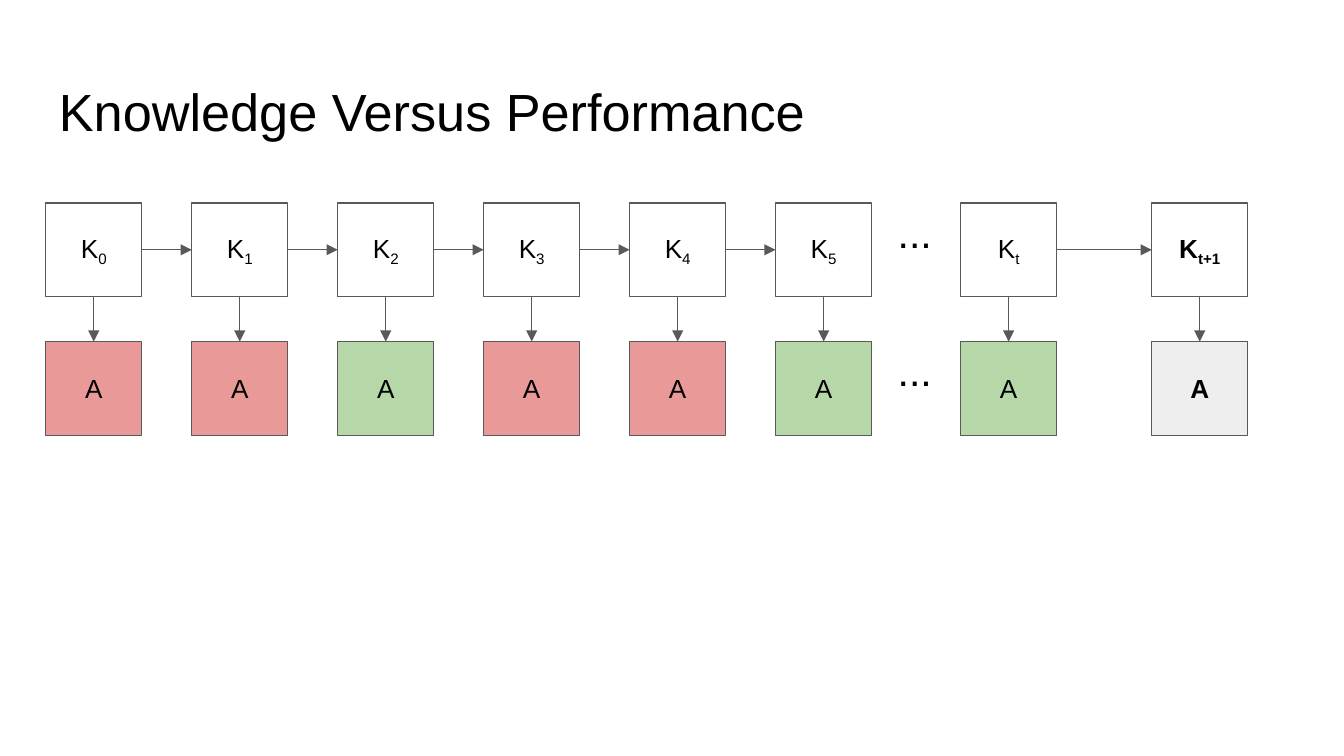
from dataclasses import dataclass

from lxml import etree
from pptx import Presentation
from pptx.dml.color import RGBColor
from pptx.enum.shapes import MSO_CONNECTOR, MSO_SHAPE
from pptx.enum.text import MSO_ANCHOR, PP_ALIGN
from pptx.oxml.ns import qn
from pptx.util import Pt

RECT = MSO_SHAPE.RECTANGLE
STRAIGHT = MSO_CONNECTOR.STRAIGHT
TOP, MIDDLE = MSO_ANCHOR.TOP, MSO_ANCHOR.MIDDLE
LEFT, CENTER = PP_ALIGN.LEFT, PP_ALIGN.CENTER
SITE_TOP, SITE_LEFT, SITE_BOTTOM, SITE_RIGHT = range(4)


@dataclass(frozen=True)
class Theme:
    font: str = "Arial"
    text: str = "000000"
    line: str = "595959"
    white: str = "FFFFFF"
    wrong: str = "EA9999"
    right: str = "B6D7A8"
    unknown: str = "EEEEEE"
    title_size: float = 28
    dots_size: float = 22
    box_size: float = 14
    line_width: float = 0.75
    inset: float = 7.2


class SlideBuilder:
    def __init__(self, slide, theme):
        self.slide = slide
        self.theme = theme

    def set_text(self, sp, text, size, align, anchor, bold=False, sub=""):
        tf = sp.text_frame
        tf.word_wrap = True
        tf.vertical_anchor = anchor
        tf.margin_left = tf.margin_right = Pt(self.theme.inset)
        tf.margin_top = tf.margin_bottom = Pt(self.theme.inset)
        p = tf.paragraphs[0]
        p.text = text
        p.alignment = align
        if sub:
            r = p.add_run()
            r.text = sub
            r.font._element.set("baseline", "-25000")
        for r in p.runs:
            r.font.name = self.theme.font
            r.font.size = Pt(size)
            r.font.bold = bold
            r.font.color.rgb = RGBColor.from_string(self.theme.text)

    def stroke(self, line):
        line.color.rgb = RGBColor.from_string(self.theme.line)
        line.width = Pt(self.theme.line_width)

    def label(self, x, y, w, h, text, size, align=CENTER):
        sp = self.slide.shapes.add_textbox(Pt(x), Pt(y), Pt(w), Pt(h))
        self.set_text(sp, text, size, align, TOP)

    def box(self, x, y, w, h, fill, text, bold=False, sub=""):
        sp = self.slide.shapes.add_shape(RECT, Pt(x), Pt(y), Pt(w), Pt(h))
        sp.shadow.inherit = False
        sp.fill.solid()
        sp.fill.fore_color.rgb = RGBColor.from_string(fill)
        self.stroke(sp.line)
        self.set_text(sp, text, self.theme.box_size, CENTER, MIDDLE, bold, sub)
        return sp

    def arrow(self, start, start_site, end, end_site):
        c = self.slide.shapes.add_connector(STRAIGHT, 0, 0, 0, 0)
        c.begin_connect(start, start_site)
        c.end_connect(end, end_site)
        self.stroke(c.line)
        ln = c._element.spPr.find(qn("a:ln"))
        etree.SubElement(ln, qn("a:tailEnd"), type="triangle")
        etree.SubElement(c._element.spPr, qn("a:effectLst"))


def main():
    prs = Presentation()
    prs.slide_width, prs.slide_height = Pt(720), Pt(405)
    theme = Theme()
    s = SlideBuilder(prs.slides.add_slide(prs.slide_layouts[6]), theme)
    s.label(24.5, 35.3, 671, 45.4, "Knowledge Versus Performance", theme.title_size, LEFT)

    left, pitch, box_w, box_h = 24.5, 78.2, 51.5, 50.3
    knowledge_y, answer_y = 108.7, 183
    wrong, right = theme.wrong, theme.right
    fills = [wrong, wrong, right, wrong, wrong, right]
    steps = [(left + i * pitch, str(i), fill) for i, fill in enumerate(fills)]
    steps += [(514.6, "t", right), (617, "t+1", theme.unknown)]

    previous = None
    for x, index, fill in steps:
        bold = index == "t+1"
        answer = s.box(x, answer_y, box_w, box_h, fill, "A", bold)
        knowledge = s.box(x, knowledge_y, box_w, box_h, theme.white, "K", bold, index)
        s.arrow(knowledge, SITE_BOTTOM, answer, SITE_TOP)
        if previous and index != "t":
            s.arrow(previous, SITE_RIGHT, knowledge, SITE_LEFT)
        previous = knowledge

    for y in (knowledge_y, answer_y):
        s.label(449.6, y - 5, 81, 35.3, "...", theme.dots_size)

    prs.save("out.pptx")


if __name__ == "__main__":
    main()
